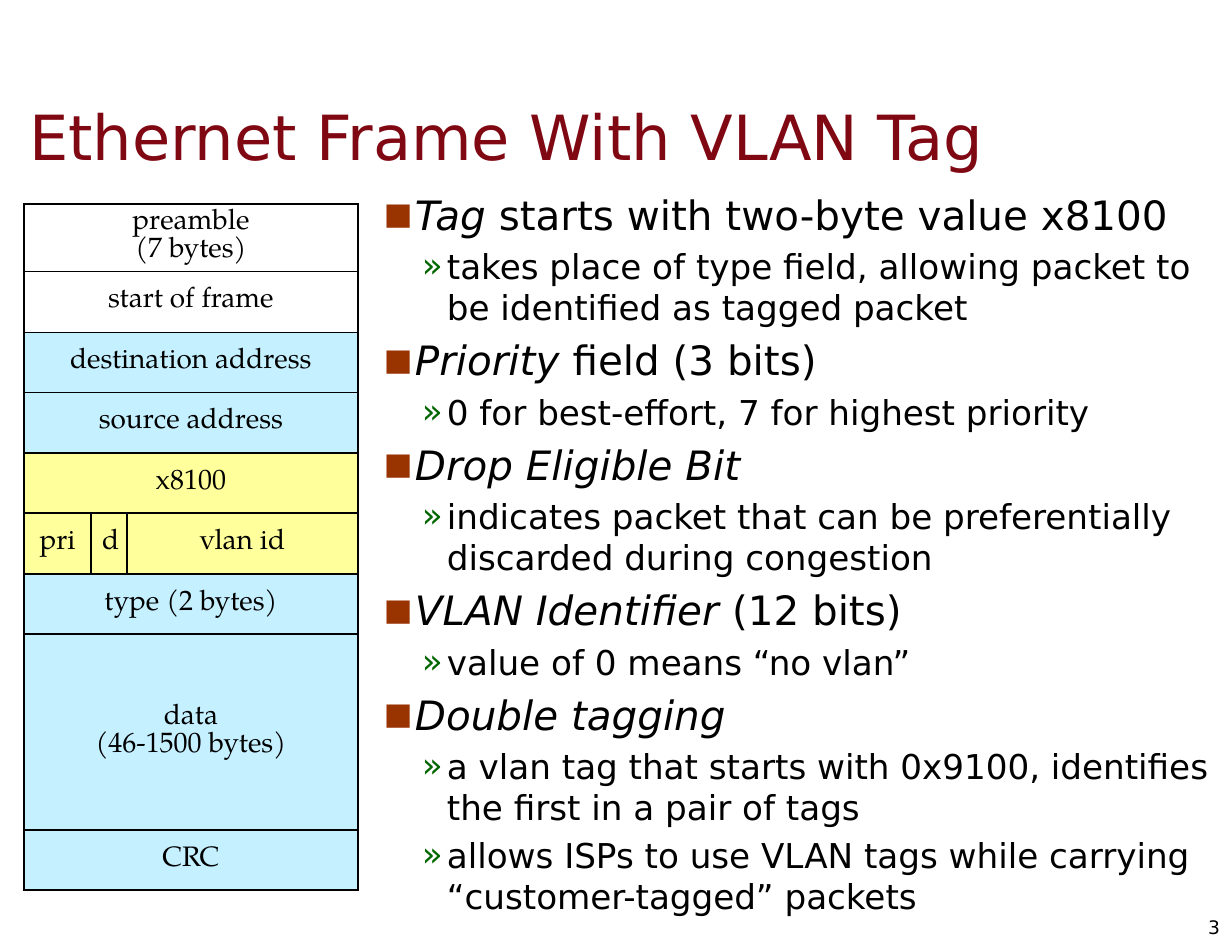
from itertools import pairwise

from lxml import etree
from pptx import Presentation
from pptx import util as u
from pptx.dml.color import RGBColor
from pptx.enum import text
from pptx.oxml.ns import qn

SCALE = 914400 / 112
ALIGN = text.PP_ALIGN
WHITE, BLUE, YELLOW = "FFFFFF", "C5F0FF", "FFFF9B"

# Label and fill of each frame row; several labels split the row.
ROWS = [
    (["preamble\v(7 bytes)"], WHITE),
    (["start of frame"], WHITE),
    (["destination address"], BLUE),
    (["source address"], BLUE),
    (["x8100"], YELLOW),
    (["pri", "d", "vlan id"], YELLOW),
    (["type (2 bytes)"], BLUE),
    (["data\v(46-1500 bytes)"], BLUE),
    (["CRC"], BLUE),
]
COLS = [67, 36, 231]
EDGES = [0, 67, 128, 188, 249, 309, 370, 430, 626, 686]

# Italic term, plain rest, and the points below them.
TOPICS = [
    ("Tag", " starts with two-byte value x8100",
     ["takes place of type field, allowing packet to be identified as tagged packet"]),
    ("Priority", " field (3 bits)",
     ["0 for best-effort, 7 for highest priority"]),
    ("Drop Eligible Bit", "",
     ["indicates packet that can be preferentially discarded during congestion"]),
    ("VLAN Identifier", " (12 bits)",
     ["value of 0 means “no vlan”"]),
    ("Double tagging", "",
     ["a vlan tag that starts with 0x9100, identifies the first in a pair of tags",
      "allows ISPs to use VLAN tags while carrying “customer-tagged” packets"]),
]
HEAD = dict(level=0, size=26, left=31, hang=31, mark="■", color="993300", scale=75)
POINT = dict(level=1, size=22, left=63, hang=25, mark="»", color="006600", scale=100)


def px(n):
    return u.Emu(round(n * SCALE))


def rgb(code):
    return RGBColor.from_string(code)


def apply(item, **values):
    for name, value in values.items():
        setattr(item, name, value)


class Deck:
    sans, serif = "DejaVu Sans", "TeX Gyre Pagella"

    def __init__(self, wide, high):
        self.prs = Presentation()
        apply(self.prs, slide_width=px(wide), slide_height=px(high))
        self.slide = self.prs.slides.add_slide(self.prs.slide_layouts[5])

    def style(self, font, size, color="000000", name=sans):
        apply(font, name=name, size=u.Pt(size))
        font.color.rgb = rgb(color)

    def frame(self, shape, anchor):
        box = shape.text_frame
        apply(box, word_wrap=True, vertical_anchor=anchor,
              auto_size=text.MSO_AUTO_SIZE.NONE,
              margin_left=px(12), margin_right=px(12),
              margin_top=px(6), margin_bottom=px(6))
        return box

    def title(self, words, x, y, w, h):
        shape = self.slide.shapes.title
        apply(shape, left=px(x), top=px(y), width=px(w), height=px(h))
        box = self.frame(shape, text.MSO_ANCHOR.MIDDLE)
        box.text = words
        para = box.paragraphs[0]
        para.alignment = ALIGN.LEFT
        self.style(para.runs[0].font, 40, "7F0813")

    def box(self, x, y, w, h, anchor=text.MSO_ANCHOR.TOP):
        shape = self.slide.shapes.add_textbox(px(x), px(y), px(w), px(h))
        return self.frame(shape, anchor)

    def number(self, words, *place):
        para = self.box(*place, anchor=text.MSO_ANCHOR.MIDDLE).paragraphs[0]
        para.alignment = ALIGN.RIGHT
        run = para.add_run()
        run.text = words
        self.style(run.font, 12)

    def bullet(self, para, look):
        props = para._p.get_or_add_pPr()
        props.set("marL", str(px(look["left"])))
        props.set("indent", str(-px(look["hang"])))
        tint = etree.SubElement(props, qn("a:buClr"))
        etree.SubElement(tint, qn("a:srgbClr"), val=look["color"])
        etree.SubElement(props, qn("a:buSzPct"), val=str(look["scale"] * 1000))
        etree.SubElement(props, qn("a:buFont"), typeface=self.sans)
        etree.SubElement(props, qn("a:buChar"), char=look["mark"])

    def item(self, para, look, term, rest, first=False):
        self.bullet(para, look)
        gap = 0 if first else look["size"] * 0.2
        apply(para, level=look["level"], space_before=u.Pt(gap))
        for words, slant in ((term, True), (rest, False)):
            if words:
                run = para.add_run()
                run.text = words
                self.style(run.font, look["size"])
                run.font.italic = slant

    def outline(self, topics, *place):
        box = self.box(*place)
        items = []
        for term, rest, points in topics:
            items.append((HEAD, term, rest))
            items += [(POINT, "", point) for point in points]
        for i, entry in enumerate(items):
            para = box.add_paragraph() if i else box.paragraphs[0]
            self.item(para, *entry, first=i == 0)

    def border(self, cell):
        props = cell._tc.get_or_add_tcPr()
        for side in "LRTB":
            line = etree.SubElement(props, qn(f"a:ln{side}"), w=str(u.Pt(1)))
            fill = etree.SubElement(line, qn("a:solidFill"))
            etree.SubElement(fill, qn("a:srgbClr"), val="000000")

    def label(self, cell, words):
        cell.text = words
        para = cell.text_frame.paragraphs[0]
        apply(para, alignment=ALIGN.CENTER, line_spacing=u.Pt(18))
        for run in para.runs:
            self.style(run.font, 18, name=self.serif)

    def table(self, rows, cols, edges, x, y):
        shape = self.slide.shapes.add_table(
            len(rows), len(cols), px(x), px(y), px(sum(cols)), px(edges[-1]))
        grid = shape.table
        apply(grid, first_row=False, horz_banding=False)
        for col, wide in zip(grid.columns, cols):
            col.width = px(wide)
        for r, ((top, end), (labels, fill)) in enumerate(zip(pairwise(edges), rows)):
            grid.rows[r].height = px(end - top)
            cells = list(grid.rows[r].cells)
            for cell in cells:
                self.border(cell)
                cell.fill.solid()
                cell.fill.fore_color.rgb = rgb(fill)
                apply(cell, vertical_anchor=text.MSO_ANCHOR.MIDDLE)
            if len(labels) == 1:
                cells[0].merge(cells[-1])
            for cell, words in zip(cells, labels):
                self.label(cell, words)


def main():
    deck = Deck(1232, 952)
    deck.title("Ethernet Frame With VLAN Tag", 17, 78, 1179, 116)
    deck.table(ROWS, COLS, EDGES, 24, 204)
    deck.outline(TOPICS, 372, 184, 860, 739)
    deck.number("3", 1179, 902, 53, 50)
    deck.prs.save("out.pptx")


if __name__ == "__main__":
    main()
